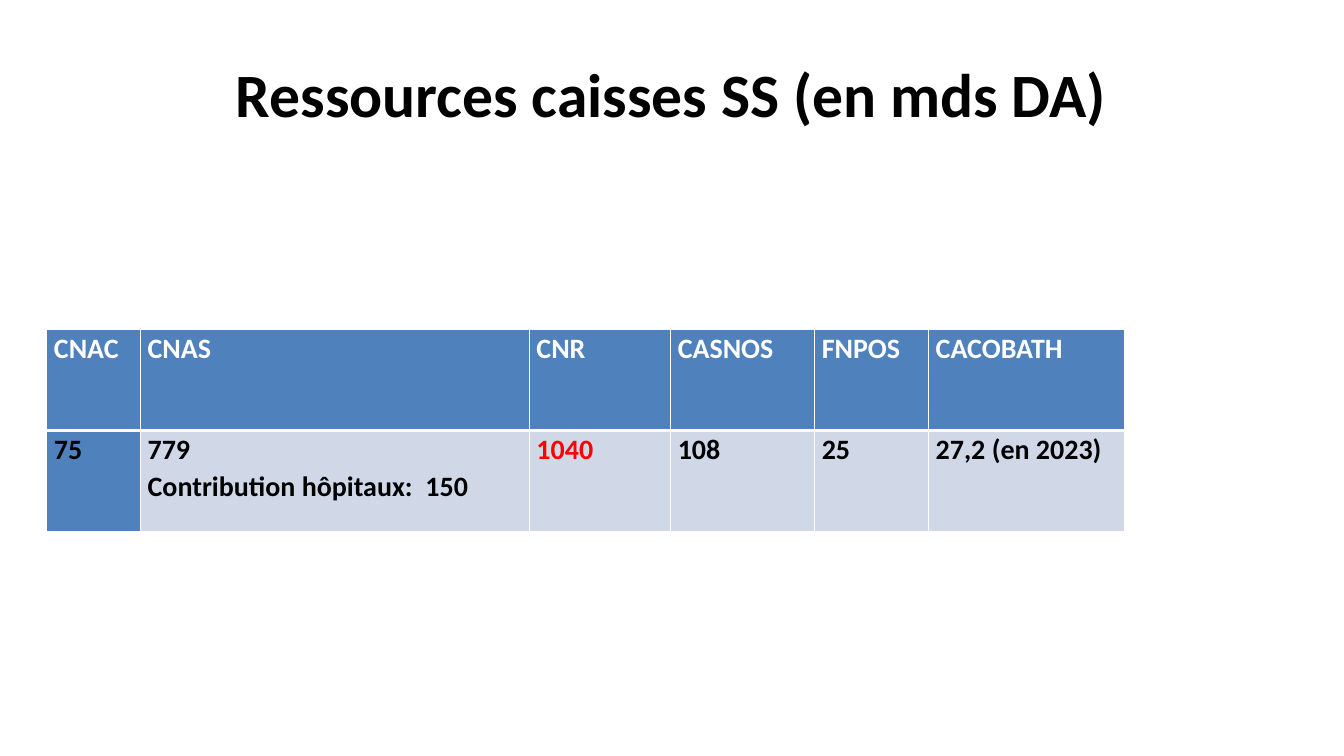
from lxml import etree
from pptx import Presentation
from pptx.dml.color import RGBColor
from pptx.enum import text
from pptx.oxml import ns
from pptx.util import Cm, Pt

WHITE = RGBColor(0xFF, 0xFF, 0xFF)
BLACK = RGBColor(0, 0, 0)
RED = RGBColor(0xFF, 0, 0)
BLUE = RGBColor(0x4F, 0x81, 0xBD)
PALE = RGBColor(0xD0, 0xD8, 0xE8)

FONT = "Calibri"
HEADS = ["CNAC", "CNAS", "CNR", "CASNOS", "FNPOS", "CACOBATH"]
SUMS = ["75", "779\nContribution hôpitaux:  150", "1040", "108", "25",
        "27,2 (en 2023)"]
WIDTHS = [2.36, 9.8, 3.56, 3.63, 2.87, 4.93]


def style(para, size, color, align):
    font = para.font
    font.name, font.size, font.bold = FONT, Pt(size), True
    font.color.rgb = color
    para.alignment = align


def add_title(slide, left, top, width, height):
    title = slide.shapes.title
    title.left, title.top = Cm(left), Cm(top)
    title.width, title.height = Cm(width), Cm(height)
    frame = title.text_frame
    frame.text = "Ressources caisses SS (en mds DA)"
    frame.vertical_anchor = text.MSO_ANCHOR.MIDDLE
    style(frame.paragraphs[0], 44, BLACK, text.PP_ALIGN.CENTER)


def add_edges(cell, top, bottom):
    props = cell._tc.get_or_add_tcPr()
    for side, points in (("L", 1), ("R", 1), ("T", top), ("B", bottom)):
        line = etree.SubElement(props, ns.qn("a:ln" + side), w=str(Pt(points)))
        fill = etree.SubElement(line, ns.qn("a:solidFill"))
        etree.SubElement(fill, ns.qn("a:srgbClr"), val=str(WHITE))


def fill_cell(cell, words, back, color, top, bottom):
    cell.margin_left = cell.margin_right = Cm(0.18)
    cell.margin_top = cell.margin_bottom = 0
    add_edges(cell, top, bottom)
    cell.fill.solid()
    cell.fill.fore_color.rgb = back
    cell.text = words
    for para in cell.text_frame.paragraphs:
        style(para, 20, color, text.PP_ALIGN.JUSTIFY)
        para.line_spacing = 1.07


def add_funds(slide, left, top, height):
    table = slide.shapes.add_table(2, len(HEADS), Cm(left), Cm(top),
                                   Cm(sum(WIDTHS)), Cm(height)).table
    for col, (head, total, width) in enumerate(zip(HEADS, SUMS, WIDTHS)):
        table.columns[col].width = Cm(width)
        fill_cell(table.cell(0, col), head, BLUE, WHITE, 1, 3)
        fill_cell(table.cell(1, col), total,
                  BLUE if head == "CNAC" else PALE,
                  RED if head == "CNR" else BLACK, 3, 1)


def main():
    deck = Presentation()
    deck.slide_width, deck.slide_height = Cm(33.87), Cm(19.05)
    slide = deck.slides.add_slide(deck.slide_layouts[5])
    # Heading
    add_title(slide, 1.69, 0.76, 30.48, 3.18)
    # Resources of each fund
    add_funds(slide, 1.18, 8.31, 5.08)
    deck.save("out.pptx")


if __name__ == "__main__":
    main()
